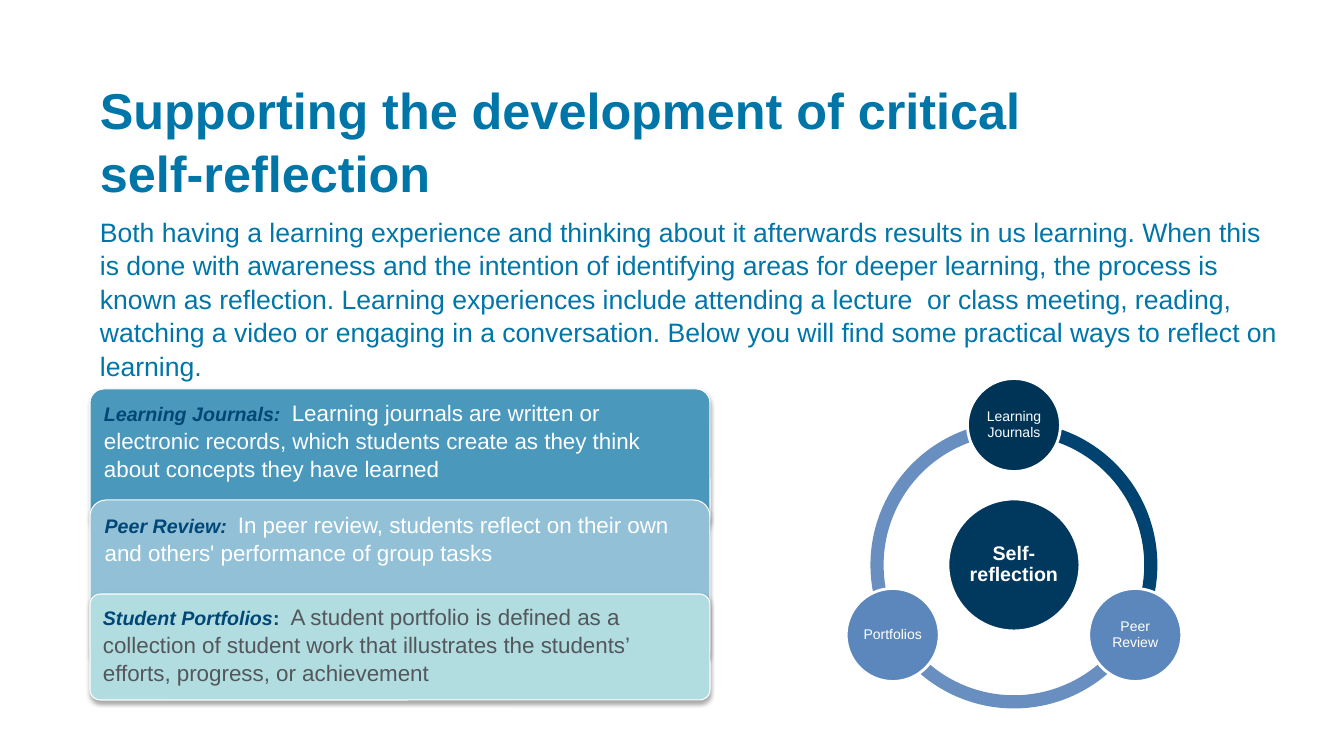
import math

import pptx
import pptx.dml.color
import pptx.enum.shapes
import pptx.enum.text
import pptx.oxml
import pptx.oxml.ns
import pptx.util

TITLE = ("Supporting the development of critical", "self-reflection")
INTRO = (
    "Both having a learning experience and thinking about it afterwards results in us learning. "
    "When this is done with awareness and the intention of identifying areas for deeper learning, "
    "the process is known as reflection. Learning experiences include attending a lecture  or class "
    "meeting, reading, watching a video or engaging in a conversation. Below you will find some "
    "practical ways to reflect on learning."
)
# top, height, fill, text colour, heading, colon and gap in italics, description
CARDS = [
    (389, 142, "journal_card", "white", "Learning Journals", True,
     "Learning journals are written or electronic records, which students create as they think "
     "about concepts they have learned"),
    (500, 167, "peer_card", "white", "Peer Review", True,
     "In peer review, students reflect on their own and others' performance of group tasks"),
    (594, 106, "portfolio_card", "grey", "Student Portfolios", False,
     "A student portfolio is defined as a collection of student work that illustrates the "
     "students’ efforts, progress, or achievement"),
]
HUB = "Self-reflection"
# label, angle on the ring, circle fill, fill of the arc that follows clockwise
NODES = [
    ("Portfolios", 150, "node", "arc"),
    ("Peer Review", 30, "node", "arc"),
    ("Learning Journals", 270, "dark_node", "dark_arc"),
]

THEME = {
    "font": "Arial",
    "colors": {
        "blue": "0076A8", "navy": "004676", "white": "FFFFFF", "grey": "53565A",
        "journal_card": "4A98BC", "peer_card": "92C1D7", "portfolio_card": "B1DDE1",
        "hub": "00385E", "node": "5C87BC", "dark_node": "003457",
        "arc": "698FC1", "dark_arc": "004371",
    },
    "sizes": {"title": 36, "intro": 19, "heading": 14, "card": 16, "hub": 14, "node": 10},
}

SLIDE_SIZE = (1344, 756)
TEXT_LEFT, TEXT_WIDTH = 90, 1202
CARD_WIDTH = 620
CENTER_X, CENTER_Y = 1014, 565
RING, HUB_SIZE, NODE_SIZE, ORBIT = 287, 132, 93, 140
ARC_SPAN = 360 // len(NODES)
SHAPES = pptx.enum.shapes.MSO_SHAPE


def px(length):
    return pptx.util.Emu(round(length * 914400 / 100.8))


def color(name):
    return pptx.dml.color.RGBColor.from_string(THEME["colors"][name])


def add_run(paragraph, text, size, color_name, **formats):
    run = paragraph.add_run()
    run.text = text
    run.font.color.rgb = color(color_name)
    formats.update(name=THEME["font"], size=pptx.util.Pt(THEME["sizes"][size]))
    for attribute, value in formats.items():
        setattr(run.font, attribute, value)


def prepare_text(shape, centered=False, inset=None):
    """Set the frame's layout and return its first paragraph."""
    frame = shape.text_frame
    frame.word_wrap = True
    anchors, aligns = pptx.enum.text.MSO_ANCHOR, pptx.enum.text.PP_ALIGN
    frame.vertical_anchor = anchors.MIDDLE if centered else anchors.TOP
    if inset is not None:
        for side in ("left", "top", "right", "bottom"):
            setattr(frame, f"margin_{side}", px(inset))
    paragraph = frame.paragraphs[0]
    paragraph.alignment = aligns.CENTER if centered else aligns.LEFT
    paragraph.line_spacing = 0.9 if centered else 1.05
    return paragraph


def add_text_box(slide, top, height):
    box = slide.shapes.add_textbox(px(TEXT_LEFT), px(top), px(TEXT_WIDTH), px(height))
    return prepare_text(box)


def add_filled(slide, kind, bounds, fill, line_width=0):
    shape = slide.shapes.add_shape(kind, *map(px, bounds))
    shape.shadow.inherit = False
    shape.fill.solid()
    shape.fill.fore_color.rgb = color(fill)
    if line_width:
        shape.line.color.rgb = color("white")
        shape.line.width = pptx.util.Pt(line_width)
    else:
        shape.line.fill.background()
    return shape


def add_soft_shadow(shape):
    effects = shape._element.spPr.find(pptx.oxml.ns.qn("a:effectLst"))
    effects.append(pptx.oxml.parse_xml(
        f'<a:outerShdw {pptx.oxml.ns.nsdecls("a")} blurRad="{pptx.util.Pt(3.1)}" '
        f'dist="{pptx.util.Pt(1.8)}" dir="5400000" rotWithShape="0">'
        '<a:srgbClr val="000000"><a:alpha val="35000"/></a:srgbClr></a:outerShdw>'))


def add_card(slide, top, height, fill, text_color, heading, italic_colon, description):
    bounds = (TEXT_LEFT, top, CARD_WIDTH, height)
    card = add_filled(slide, SHAPES.ROUNDED_RECTANGLE, bounds, fill, 0.75)
    card.adjustments[0] = 0.097
    add_soft_shadow(card)
    paragraph = prepare_text(card)
    add_run(paragraph, heading, "heading", "navy", bold=True, italic=True)
    add_run(paragraph, ":  ", "heading", "navy", bold=True, italic=italic_colon)
    add_run(paragraph, description, "card", text_color)


def centered_square(x, y, size):
    return x - size / 2, y - size / 2, size, size


def add_circle(slide, x, y, size, fill, label, style, inset, bold=False):
    circle = add_filled(slide, SHAPES.OVAL, centered_square(x, y, size), fill, 2)
    paragraph = prepare_text(circle, centered=True, inset=inset)
    add_run(paragraph, label, style, "white", bold=bold)


def add_cycle(slide):
    for _, angle, _, arc_fill in NODES:
        arc = add_filled(slide, SHAPES.BLOCK_ARC,
                         centered_square(CENTER_X, CENTER_Y, RING), arc_fill)
        # Angles are stored in 60000ths of a degree, adjustments in 100000ths.
        arc.adjustments[0] = angle * 0.6
        arc.adjustments[1] = (angle + ARC_SPAN) % 360 * 0.6
        arc.adjustments[2] = 0.046
    add_circle(slide, CENTER_X, CENTER_Y, HUB_SIZE, "hub", HUB, "hub", 2, bold=True)
    for label, angle, fill, _ in NODES:
        x = CENTER_X + ORBIT * math.cos(math.radians(angle))
        y = CENTER_Y + ORBIT * math.sin(math.radians(angle))
        add_circle(slide, x, y, NODE_SIZE, fill, label, "node", 1)


def main():
    presentation = pptx.Presentation()
    presentation.slide_width, presentation.slide_height = map(px, SLIDE_SIZE)
    slide = presentation.slides.add_slide(presentation.slide_layouts[6])

    title = add_text_box(slide, 71, 122)
    for index, line in enumerate(TITLE):
        if index:
            title.add_line_break()
        add_run(title, line, "title", "blue", bold=True)
    add_run(add_text_box(slide, 209, 226), INTRO, "intro", "blue")

    for card in CARDS:
        add_card(slide, *card)
    add_cycle(slide)
    presentation.save("out.pptx")


if __name__ == "__main__":
    main()
